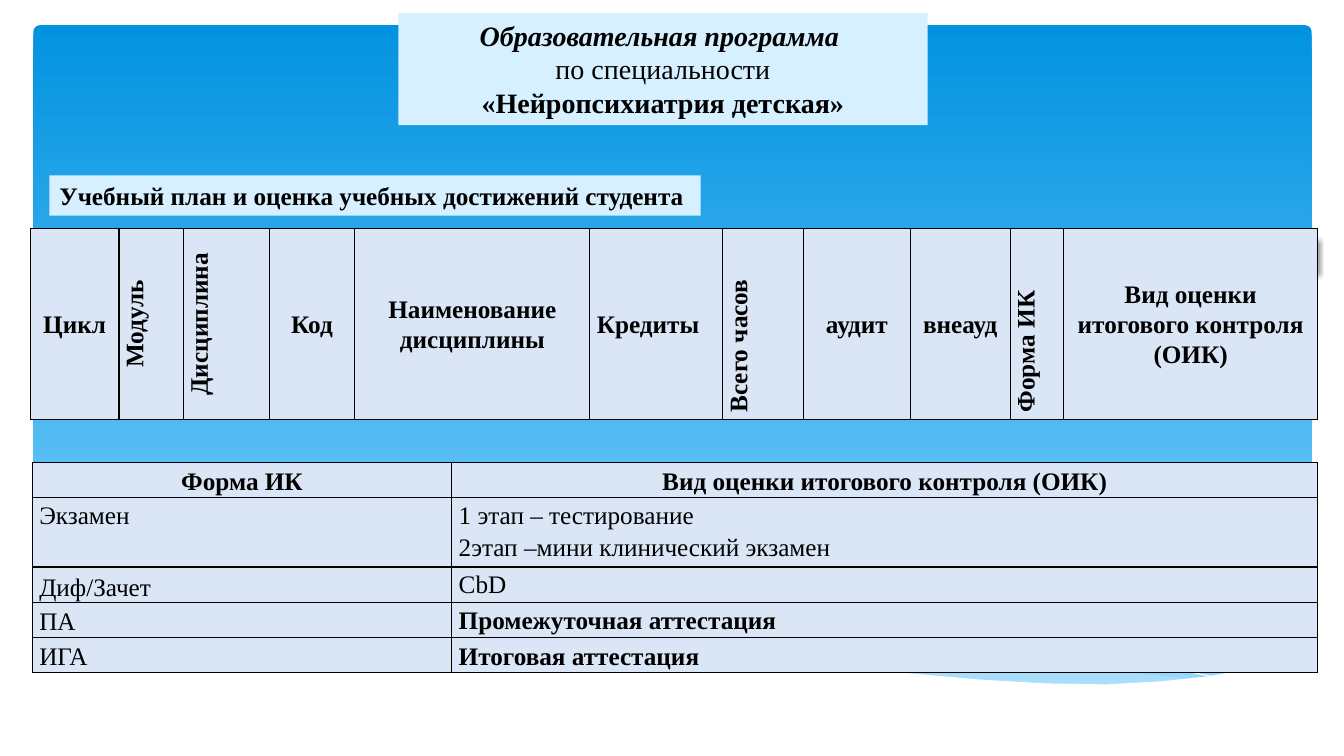
from dataclasses import dataclass

from lxml.etree import SubElement
from pptx import Presentation
from pptx.dml.color import RGBColor
from pptx.enum.dml import MSO_LINE
from pptx.enum.shapes import MSO_CONNECTOR, MSO_SHAPE
from pptx.enum.text import MSO_ANCHOR, MSO_AUTO_SIZE, PP_ALIGN
from pptx.oxml import parse_xml
from pptx.oxml.ns import nsdecls, qn
from pptx.util import Emu, Pt

PX = 9144  # one px is a hundredth of an inch
LEFT, CENTER = PP_ALIGN.LEFT, PP_ALIGN.CENTER
TOP, MIDDLE, BOTTOM = MSO_ANCHOR.TOP, MSO_ANCHOR.MIDDLE, MSO_ANCHOR.BOTTOM


def px(length):
    return Emu(length * PX)


@dataclass
class Theme:
    font: str = "Times New Roman"
    title_size: int = 20
    text_size: int = 18
    text: str = "000000"
    label: str = "D6F0FF"
    cell: str = "DAE6F6"
    panel_top: str = "0293E0"
    panel_bottom: str = "83D3FE"
    wave: str = "C6E7FC"
    white: str = "FFFFFF"
    rule: str = "9C8761"


@dataclass
class Cell:
    text: str
    align: PP_ALIGN = LEFT
    anchor: MSO_ANCHOR = MIDDLE
    bold: bool = False
    turned: bool = False
    after: int = 0


class SlideBuilder:
    def __init__(self, page, theme):
        self.page, self.theme = page, theme

    def paint(self, fill, color):
        fill.solid()
        fill.fore_color.rgb = RGBColor.from_string(color)

    def style(self, para, size, align, bold=False, italic=False):
        para.alignment = align
        font = para.font
        font.name, font.size, font.bold, font.italic = self.theme.font, Pt(size), bold, italic
        font.color.rgb = RGBColor.from_string(self.theme.text)

    def panel(self, x, y, width, height):
        box = self.page.shapes.add_shape(
            MSO_SHAPE.ROUNDED_RECTANGLE, px(x), px(y), px(width), px(height))
        box.adjustments[0] = 0.01
        box.shadow.inherit = False
        box.line.fill.background()
        box.fill.gradient()
        box.fill.gradient_angle = 270
        colors = (self.theme.panel_top, self.theme.panel_bottom)
        for stop, color, position in zip(box.fill.gradient_stops, colors, (0, 1)):
            stop.color.rgb = RGBColor.from_string(color)
            stop.position = position

    def wave(self, points, color, opacity=100, closed=True):
        builder = self.page.shapes.build_freeform(*points[0], scale=PX)
        builder.add_line_segments(points[1:], close=closed)
        shape = builder.convert_to_shape()
        shape.shadow.inherit = False
        if closed:
            self.paint(shape.fill, color)
            shape.line.fill.background()
            solid = shape._element.spPr.find(qn("a:solidFill"))
            SubElement(solid[0], qn("a:alpha"), val=str(opacity * 1000))
        else:
            shape.fill.background()
            self.paint(shape.line.fill, color)
            shape.line.width = Pt(0)

    def rule(self, x1, x2, y, width):
        line = self.page.shapes.add_connector(
            MSO_CONNECTOR.STRAIGHT, px(x1), px(y), px(x2), px(y))
        self.paint(line.line.fill, self.theme.rule)
        line.line.width = Pt(width)
        line.line.dash_style = MSO_LINE.SOLID
        properties = line._element.spPr
        properties.find(qn("a:ln")).set("cap", "sq")
        properties.append(parse_xml(
            f'<a:effectLst {nsdecls("a")}><a:outerShdw blurRad="50800" dist="25400" '
            'dir="5400000" rotWithShape="0"><a:srgbClr val="000000">'
            '<a:alpha val="38000"/></a:srgbClr></a:outerShdw></a:effectLst>'))

    def title(self, x, y, width, height, lines):
        box = self.page.shapes.title
        self.page.shapes._spTree.append(box._element)
        box.left, box.top, box.width, box.height = px(x), px(y), px(width), px(height)
        self.paint(box.fill, self.theme.label)
        frame = box.text_frame
        frame.auto_size = MSO_AUTO_SIZE.SHAPE_TO_FIT_TEXT
        frame.vertical_anchor = TOP
        frame.text = "\n".join(text for text, _, _ in lines)
        for para, (_, bold, italic) in zip(frame.paragraphs, lines):
            self.style(para, self.theme.title_size, CENTER, bold, italic)

    def label(self, x, y, width, height, text):
        box = self.page.shapes.add_textbox(px(x), px(y), px(width), px(height))
        self.paint(box.fill, self.theme.label)
        box.text_frame.word_wrap = False
        box.text_frame.auto_size = MSO_AUTO_SIZE.SHAPE_TO_FIT_TEXT
        box.text_frame.text = text
        self.style(box.text_frame.paragraphs[0], self.theme.text_size, LEFT, bold=True)

    def table(self, x, y, columns, rows, content, spacing):
        frame = self.page.shapes.add_table(
            len(rows), len(columns), px(x), px(y), px(sum(columns)), px(sum(rows)))
        table = frame.table
        table.first_row = table.horz_banding = False
        for column, width in zip(table.columns, columns):
            column.width = px(width)
        for row, height, cells in zip(table.rows, rows, content):
            row.height = px(height)
            for cell, data in zip(row.cells, cells):
                self.fill_cell(cell, data, spacing)

    def fill_cell(self, cell, data, spacing):
        cell.margin_left = cell.margin_right = px(7)
        cell.margin_top = cell.margin_bottom = 0
        cell.vertical_anchor = data.anchor
        properties = cell._tc.get_or_add_tcPr()
        if data.turned:
            properties.set("vert", "vert270")
        for side in ("lnL", "lnR", "lnT", "lnB"):
            border = SubElement(properties, qn(f"a:{side}"), w=str(Pt(1)))
            solid = SubElement(border, qn("a:solidFill"))
            SubElement(solid, qn("a:srgbClr"), val=self.theme.text)
        self.paint(cell.fill, self.theme.cell)
        cell.text_frame.text = data.text
        for para in cell.text_frame.paragraphs:
            self.style(para, self.theme.text_size, data.align, data.bold)
            para.line_spacing = spacing
            para.space_after = Pt(data.after)


def main():
    deck = Presentation()
    deck.slide_width, deck.slide_height = px(1333), px(750)
    theme = Theme()
    slide = SlideBuilder(deck.slides.add_slide(deck.slide_layouts[5]), theme)

    # Background panel and waves
    slide.panel(33, 25, 1268, 660)
    slide.wave([(1302, 601), (1248, 611), (1190, 618), (1149, 625), (1075, 639), (1006, 650),
                (942, 659), (883, 667), (922, 671), (959, 674), (994, 677), (1027, 679),
                (1087, 680), (1140, 678), (1187, 674), (1229, 667), (1267, 659), (1303, 649),
                (1303, 601)], theme.wave, 29)
    slide.wave([(1192, 675), (1118, 667), (1035, 656), (942, 642), (840, 624), (779, 613),
                (722, 604), (670, 598), (620, 593), (561, 589), (507, 587), (438, 589),
                (382, 593), (431, 598), (484, 604), (540, 613), (600, 624), (707, 642),
                (803, 657), (888, 668), (964, 676), (1032, 679), (1092, 680), (1145, 679),
                (1192, 675)], theme.wave, 40)
    slide.wave([(413, 597), (459, 592), (517, 589), (577, 589), (653, 592), (743, 598),
                (849, 610), (928, 621), (1015, 635), (1109, 652), (1211, 673)],
               theme.white, closed=False)
    slide.wave([(819, 659), (871, 648), (928, 637), (998, 625), (1076, 612), (1156, 600),
                (1215, 594), (1269, 589), (1302, 587)], theme.white, closed=False)
    slide.wave([(1302, 648), (1254, 661), (1198, 671), (1151, 676), (1097, 679), (1037, 678),
                (969, 674), (891, 667), (804, 656), (706, 641), (596, 622), (521, 609),
                (453, 599), (390, 592), (333, 588), (282, 586), (214, 586), (158, 589),
                (113, 595), (79, 601), (48, 609), (31, 615), (31, 731), (1303, 731),
                (1303, 648)], theme.white)
    slide.rule(54, 1290, 252, 25)

    # Headings
    slide.title(395, 13, 525, 111, [
        ("Образовательная программа ", True, True),
        ("по специальности", False, False),
        ("«Нейропсихиатрия детская»", True, False)])
    slide.label(49, 174, 646, 40, "Учебный план и оценка учебных достижений студента")

    # Curriculum header
    curriculum = [
        Cell("Цикл", CENTER, bold=True),
        Cell("Модуль", CENTER, bold=True, turned=True),
        Cell("Дисциплина", CENTER, bold=True, turned=True),
        Cell("Код", CENTER, bold=True),
        Cell("Наименование дисциплины", CENTER, bold=True),
        Cell("Кредиты", bold=True),
        Cell("Всего часов", bold=True, turned=True),
        Cell("аудит", CENTER, bold=True),
        Cell("внеауд", CENTER, bold=True),
        Cell("Форма ИК", anchor=TOP, bold=True, turned=True),
        Cell("Вид оценки итогового контроля (ОИК)", CENTER, bold=True)]
    slide.table(30, 227, [88, 64, 85, 85, 233, 132, 80, 106, 99, 53, 252], [189],
                [curriculum], 1.07)

    # Forms of final assessment
    assessment = [
        [Cell("Форма ИК", CENTER, bold=True, after=10),
         Cell("Вид оценки итогового контроля (ОИК)", CENTER, bold=True, after=10)],
        [Cell("Экзамен", anchor=TOP, after=10),
         Cell("1 этап – тестирование\n2этап –мини клинический экзамен", anchor=TOP)],
        [Cell("Диф/Зачет", anchor=BOTTOM, after=10), Cell("CbD", anchor=TOP)],
        [Cell("ПА", after=10),
         Cell("Промежуточная аттестация", anchor=TOP, bold=True, after=10)],
        [Cell("ИГА", after=10), Cell("Итоговая аттестация", bold=True, after=10)]]
    slide.table(32, 459, [416, 859], [34, 69, 35, 35, 34], assessment, 1.15)

    deck.save("out.pptx")


if __name__ == "__main__":
    main()
